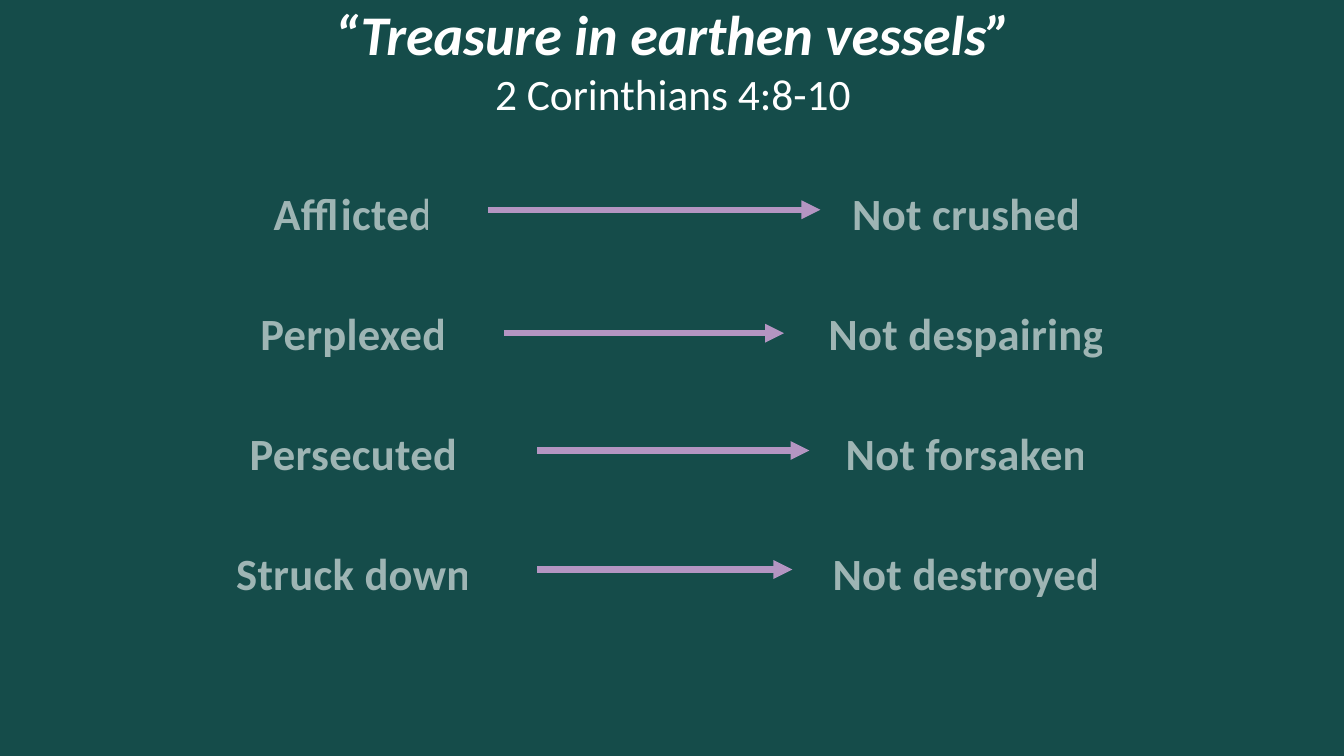
from lxml.etree import SubElement
from pptx import Presentation
from pptx.dml.color import RGBColor
from pptx.enum.shapes import MSO_CONNECTOR
from pptx.enum.text import MSO_ANCHOR, PP_ALIGN
from pptx.oxml.ns import qn
from pptx.util import Pt

TITLE = "“Treasure in earthen vessels”"
PASSAGE = "2 Corinthians 4:8-10"
TRIALS = ["Afflicted", "Perplexed", "Persecuted", "Struck down"]
OUTCOMES = ["Not crushed", "Not despairing", "Not forsaken", "Not destroyed"]
# start x, end x, y in points
ARROWS = [(348.5, 586, 149.8), (360, 560, 238), (383.8, 578.2, 321.8), (383.8, 566, 406.8)]

FONT = "Calibri"
GREEN, WHITE, LILAC = "154C4A", "FFFFFF", "B495C2"
COLUMNS_LEFT, COLUMNS_TOP, COLUMN_WIDTH, COLUMN_HEIGHT = 56.9, 121, 422.3, 419
AFFLICTED_INDENT = 31


def paint(color_format, hex_color):
    color_format.rgb = RGBColor.from_string(hex_color)


def add_text_frame(slide, left, top, width, height):
    frame = slide.shapes.add_textbox(Pt(left), Pt(top), Pt(width), Pt(height)).text_frame
    frame.word_wrap = True
    frame.vertical_anchor = MSO_ANCHOR.TOP
    frame.margin_left = frame.margin_top = frame.margin_right = frame.margin_bottom = 0
    return frame


def style_run(run, size, bold=False, italic=False):
    run.font.name = FONT
    run.font.size = Pt(size)
    run.font.bold = bold
    run.font.italic = italic
    paint_target = run.font.fill
    paint_target.solid()
    paint(paint_target.fore_color, WHITE)


def add_heading(slide):
    heading = add_text_frame(slide, 58.3, 0, 844.6, 89.3).paragraphs[0]
    heading.text = f"{TITLE}\v{PASSAGE}"
    heading.alignment = PP_ALIGN.CENTER
    title_run, passage_run = heading.runs
    style_run(title_run, 40, bold=True, italic=True)
    style_run(passage_run, 31)


def add_column(slide, phrases, left):
    frame = add_text_frame(slide, left, COLUMNS_TOP, COLUMN_WIDTH, COLUMN_HEIGHT)
    frame.text = "\n".join(phrases)
    for paragraph in frame.paragraphs:
        paragraph.alignment = PP_ALIGN.CENTER
        paragraph.line_spacing = 1.3
        paragraph.space_before = Pt(12)
        paragraph.space_after = Pt(24)
        run = paragraph.runs[0]
        style_run(run, 31.9, bold=True)
        properties = run.font._element
        properties.set("spc", "20")
        SubElement(properties.find(".//" + qn("a:srgbClr")), qn("a:alpha"), val="58000")
    return frame


def add_arrow(slide, start, end, y):
    arrow = slide.shapes.add_connector(MSO_CONNECTOR.STRAIGHT, Pt(start), Pt(y), Pt(end), Pt(y))
    arrow.line.width = Pt(4.5)
    arrow.line.fill.solid()
    paint(arrow.line.fill.fore_color, LILAC)
    SubElement(arrow.line._get_or_add_ln(), qn("a:tailEnd"), type="triangle")
    SubElement(arrow._element.spPr, qn("a:effectLst"))


def main():
    presentation = Presentation()
    presentation.slide_width, presentation.slide_height = Pt(960), Pt(540)
    slide = presentation.slides.add_slide(presentation.slide_layouts[6])
    slide.background.fill.solid()
    paint(slide.background.fill.fore_color, GREEN)

    add_heading(slide)
    trials = add_column(slide, TRIALS, COLUMNS_LEFT)
    trials.paragraphs[0]._p.get_or_add_pPr().set("marR", str(Pt(AFFLICTED_INDENT)))
    add_column(slide, OUTCOMES, COLUMNS_LEFT + COLUMN_WIDTH)
    for start, end, y in ARROWS:
        add_arrow(slide, start, end, y)

    presentation.save("out.pptx")


if __name__ == "__main__":
    main()
